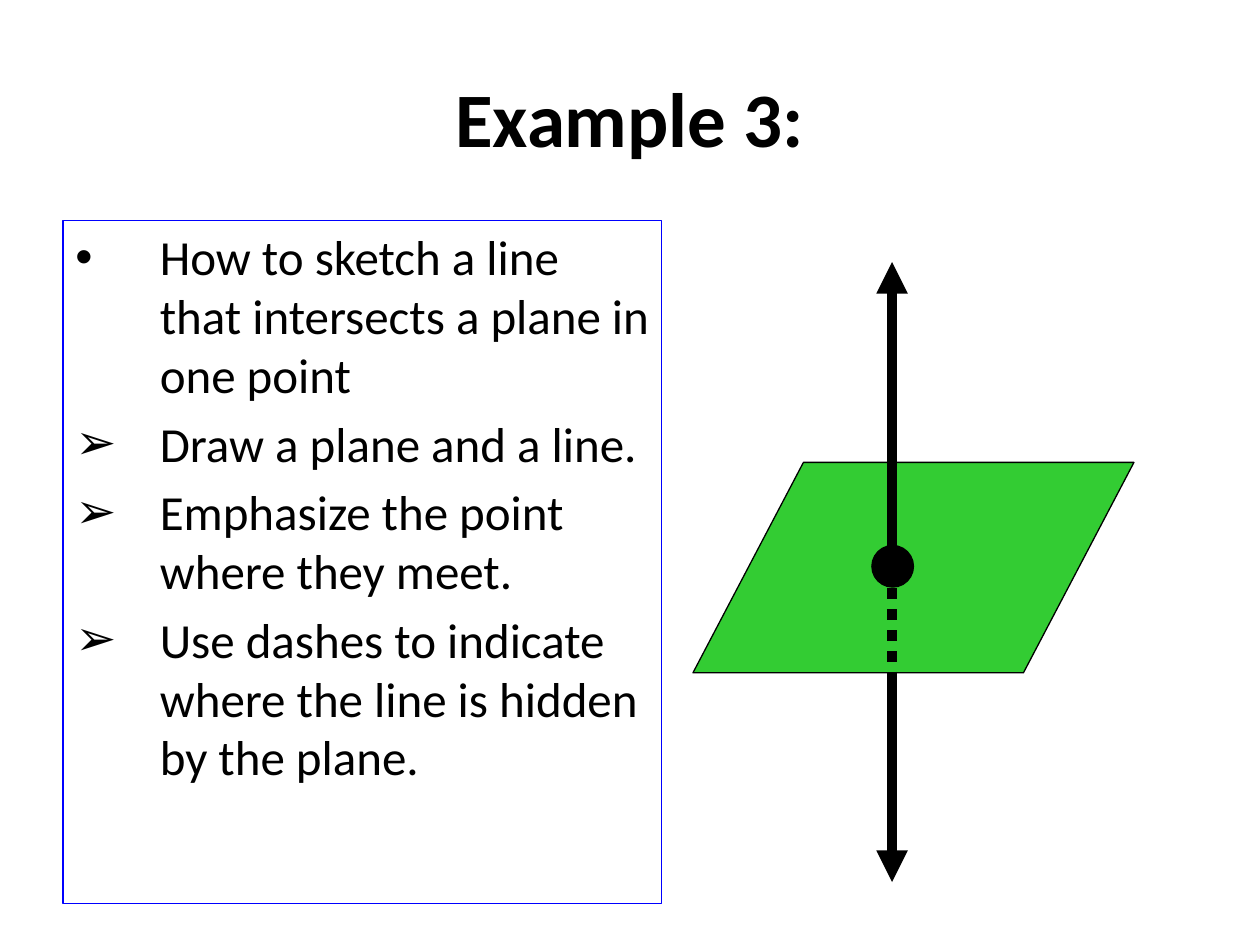
import pptx
import pptx.util
import pptx.dml.color
import pptx.enum.dml
import pptx.enum.shapes
import pptx.enum.text
import pptx.oxml
import pptx.oxml.ns
import lxml.etree

Inches, Pt = pptx.util.Inches, pptx.util.Pt
qn = pptx.oxml.ns.qn
shape_type = pptx.enum.shapes.MSO_SHAPE
align = pptx.enum.text.PP_ALIGN
anchor = pptx.enum.text.MSO_ANCHOR


def color(code):
    return pptx.dml.color.RGBColor.from_string(code)


def style(obj, values):
    for name, value in values.items():
        setattr(obj, name, value)


deck = pptx.Presentation()
style(deck, {"slide_width": Inches(10), "slide_height": Inches(7.5)})
slide = deck.slides.add_slide(deck.slide_layouts[5])

# Title
title = slide.shapes.title
style(title, {"left": Inches(0.5), "top": Inches(0.3),
              "width": Inches(9), "height": Inches(1.25)})
title.text_frame.text = "Example 3:"
title.text_frame.vertical_anchor = anchor.MIDDLE
para = title.text_frame.paragraphs[0]
para.alignment = align.CENTER
style(para.runs[0].font, {"name": "Calibri", "size": Pt(44), "bold": True})
para.runs[0].font.color.rgb = color("000000")

# Framed steps
box = slide.shapes.add_textbox(Inches(0.5), Inches(1.75), Inches(4.75), Inches(5.42))
box.line.color.rgb = color("0000FF")
box.line.width = Pt(0.75)
frame = box.text_frame
style(frame, {"word_wrap": True, "vertical_anchor": anchor.TOP})
steps = [
    ("•", "How to sketch a line that intersects a plane in one point"),
    ("➢", "Draw a plane and a line."),
    ("➢", "Emphasize the point where they meet."),
    ("➢", "Use dashes to indicate where the line is hidden by the plane."),
]
for i, (mark, text) in enumerate(steps):
    para = frame.add_paragraph() if i else frame.paragraphs[0]
    style(para, {"alignment": align.LEFT, "space_before": Pt(5.6)})
    run = para.add_run()
    run.text = text
    style(run.font, {"name": "Calibri", "size": Pt(28)})
    run.font.color.rgb = color("000000")
    props = para._p.get_or_add_pPr()
    props.set("marL", str(Inches(0.67)))
    props.set("indent", str(-Inches(0.67)))
    lxml.etree.SubElement(props, qn("a:buFont")).set("typeface", "Arial")
    lxml.etree.SubElement(props, qn("a:buChar")).set("char", mark)

# Plane and the point where the line meets it
parts = [
    (shape_type.PARALLELOGRAM, 5.5, 3.67, 3.5, 1.67, "33CC33"),
    (shape_type.OVAL, 6.92, 4.33, 0.33, 0.33, "000000"),
]
for kind, left, top, width, height, fill in parts:
    part = slide.shapes.add_shape(kind, Inches(left), Inches(top),
                                  Inches(width), Inches(height))
    part.shadow.inherit = False
    part.fill.solid()
    part.fill.fore_color.rgb = color(fill)
    part.line.color.rgb = color("000000")
    part.line.width = Pt(0.75)
    if kind == shape_type.PARALLELOGRAM:
        part.adjustments[0] = 0.525

# Line: above the plane, hidden by it, below it
axis = Inches(7.08)
dots = pptx.enum.dml.MSO_LINE.ROUND_DOT
for start, end, dash, arrow in [(4.42, 2.08, None, True),
                                (4.5, 7, dots, True),
                                (5.33, 6.75, None, False)]:
    line = slide.shapes.add_connector(pptx.enum.shapes.MSO_CONNECTOR.STRAIGHT,
                                      axis, Inches(start), axis, Inches(end))
    line.line.color.rgb = color("000000")
    style(line.line, {"width": Pt(6), "dash_style": dash})
    if arrow:
        tail = lxml.etree.SubElement(line.line._get_or_add_ln(), qn("a:tailEnd"))
        tail.set("type", "triangle")
    lxml.etree.SubElement(line._element.spPr, qn("a:effectLst"))

deck.save("out.pptx")
